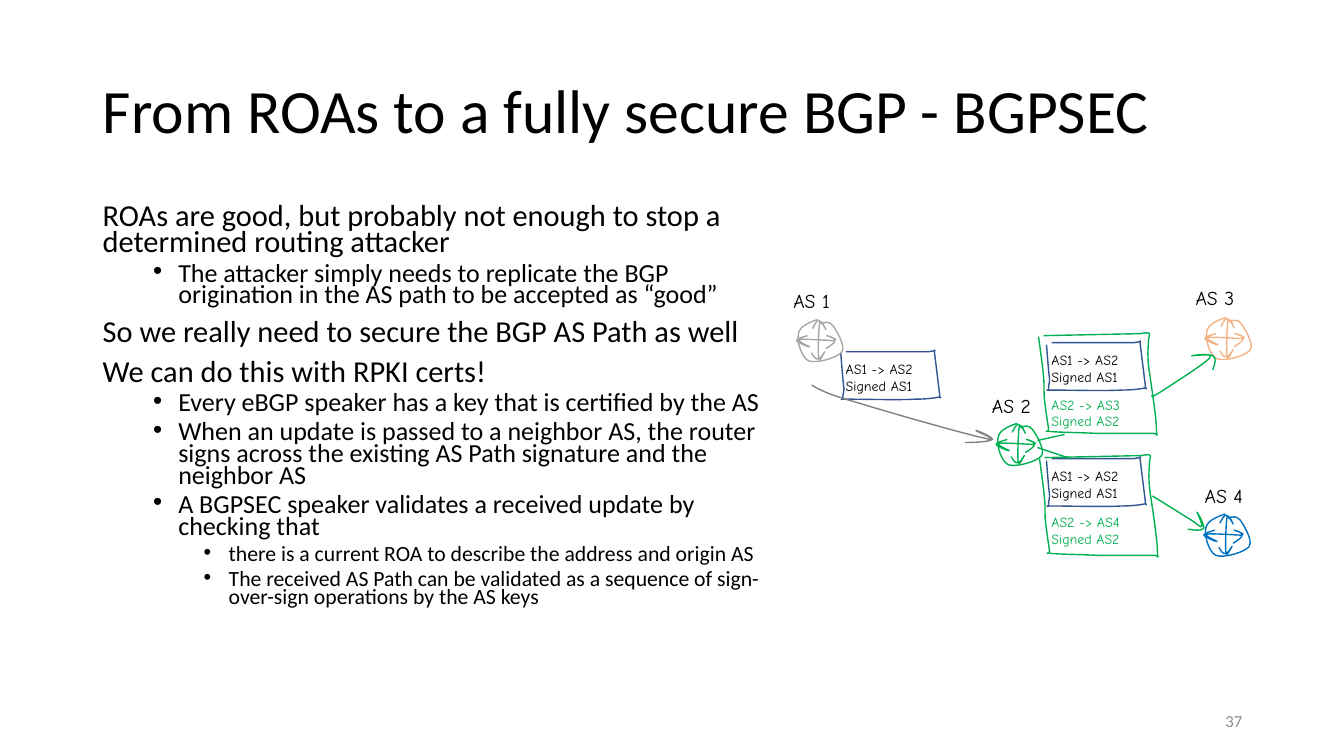
from lxml.etree import SubElement
from pptx import Presentation
from pptx.dml.color import RGBColor
from pptx.enum.shapes import MSO_CONNECTOR
from pptx.enum.text import MSO_ANCHOR, MSO_AUTO_SIZE, PP_ALIGN
from pptx.oxml.ns import qn
from pptx.util import Inches, Pt

# Fine grid: 1333 columns by 750 rows
CELL = Inches(0.01)
COLS, ROWS = 1333, 750

BLACK = RGBColor(0x00, 0x00, 0x00)
GREEN = RGBColor(0x00, 0xB0, 0x50)
BLUE = RGBColor(0x00, 0x70, 0xC0)
NAVY = RGBColor(0x32, 0x54, 0x91)
PEACH = RGBColor(0xF4, 0xB1, 0x83)
SILVER = RGBColor(0xA6, 0xA6, 0xA6)
GRAY = RGBColor(0x80, 0x80, 0x80)
PALE = RGBColor(0x8C, 0x8C, 0x8C)

SANS, HAND = "Calibri", "Comic Neue"
SIZES = (21.7, 18.6, 15.5)

POINTS = [
    (0, "ROAs are good, but probably not enough to stop a determined routing attacker"),
    (1, "The attacker simply needs to replicate the BGP origination in the AS path "
        "to be accepted as “good”"),
    (0, "So we really need to secure the BGP AS Path as well"),
    (0, "We can do this with RPKI certs!"),
    (1, "Every eBGP speaker has a key that is certified by the AS"),
    (1, "When an update is passed to a neighbor AS, the router signs across the "
        "existing AS Path signature and the neighbor AS"),
    (1, "A BGPSEC speaker validates a received update by checking that"),
    (2, "there is a current ROA to describe the address and origin AS"),
    (2, "The received AS Path can be validated as a sequence of sign-over-sign "
        "operations by the AS keys"),
]

# Pen strokes: a start, then three points per curve; a spare last point is a line
RING = [(21, 0), (12, 3), (3, 7), (2, 14), (0, 21), (5, 38), (12, 41),
        (19, 44), (41, 38), (45, 32), (49, 26), (39, 10), (36, 6),
        (32, 1), (28, 3), (24, 4)]
ACROSS = [(11, 16), (5, 18), (0, 19), (0, 21), (1, 23), (13, 28), (13, 27),
          (13, 27), (-1, 21), (3, 20), (7, 19), (34, 21), (38, 21),
          (43, 20), (30, 16), (30, 16), (30, 16), (39, 18), (38, 21),
          (38, 23), (34, 26), (29, 29)]
UPDOWN = [(16, 9), (18, 5), (20, 1), (22, 1), (24, 1), (29, 9), (29, 10),
          (29, 10), (24, -2), (23, 3), (22, 8), (21, 35), (22, 39),
          (22, 44), (28, 32), (28, 32), (28, 32), (24, 39), (22, 39),
          (19, 40), (17, 37), (15, 33)]
INNER = [(0, 4), (1, 17), (2, 30), (3, 38), (3, 45), (1, 46), (2, 48),
         (3, 50), (-5, 49), (7, 49), (19, 49), (59, 50), (74, 49),
         (89, 49), (97, 47), (97, 47), (101, 46), (98, 51), (98, 44),
         (97, 37), (94, 11), (93, 4), (92, -3), (94, 2), (93, 1),
         (92, 1), (87, 2), (87, 2), (5, 2)]
OUTER = [(0, 4), (2, 18), (4, 33), (5, 43), (6, 54), (5, 58), (6, 67),
         (7, 75), (9, 90), (10, 95), (11, 100), (3, 97), (11, 98),
         (19, 99), (41, 99), (58, 100), (75, 100), (101, 100), (111, 100),
         (121, 99), (117, 107), (117, 96), (117, 84), (111, 47), (109, 32),
         (108, 18), (109, 14), (109, 9), (109, 4), (111, 2), (110, 1),
         (109, -1), (101, 1), (101, 1), (5, 3)]
HOP_2 = [(805, 382), (812, 386), (820, 391), (849, 399), (878, 408), (958, 431),
         (978, 435), (998, 440), (966, 427), (968, 427), (969, 427), (986, 434),
         (984, 436), (982, 438), (969, 439), (957, 439)]
HOP_3 = [(1143, 392), (1142, 394), (1141, 395), (1151, 389), (1160, 383),
         (1195, 361), (1200, 355), (1205, 349), (1181, 353), (1182, 353),
         (1182, 353), (1200, 351), (1203, 353), (1207, 355), (1205, 361),
         (1203, 367)]
HOP_4 = [(1143, 492), (1143, 492), (1180, 515), (1180, 515), (1188, 520),
         (1191, 524), (1192, 522), (1193, 521), (1187, 507), (1187, 508),
         (1188, 508), (1195, 522), (1194, 524), (1192, 527), (1185, 526),
         (1178, 525)]


def grid(*cells):
    return [round(cell * CELL) for cell in cells]


def add_run(para, text, size, color, face):
    run = para.add_run()
    run.text = text
    font = run.font
    font.size, font.name = Pt(size), face
    font.color.rgb = color


def add_box(slide, at, lines, size, color, face=HAND, wrap=False):
    box = slide.shapes.add_textbox(*grid(*at))
    frame = box.text_frame
    frame.word_wrap = wrap
    frame.auto_size = MSO_AUTO_SIZE.NONE if wrap else MSO_AUTO_SIZE.SHAPE_TO_FIT_TEXT
    for i, line in enumerate(lines):
        para = frame.paragraphs[0] if i == 0 else frame.add_paragraph()
        add_run(para, line, size, color, face)
    return frame


def add_point(para, level, text):
    para.level = level
    para.line_spacing = 0.7
    if level:
        props = para._p.get_or_add_pPr()
        props.set("marL", str(Inches(0.25 + 0.5 * level)))
        props.set("indent", str(-Inches(0.25)))
        SubElement(props, qn("a:buFont"), typeface="Arial")
        SubElement(props, qn("a:buChar"), char="•")
    add_run(para, text, SIZES[level], BLACK, SANS)


def bend(shape):
    """Join each three line steps of an outline into one curve."""
    outline = next(shape._element.iter(qn("a:path")))
    steps = list(outline)[1:]
    for i in range(0, len(steps) // 3 * 3, 3):
        curve = SubElement(outline, qn("a:cubicBezTo"))
        steps[i].addprevious(curve)
        for step in steps[i:i + 3]:
            curve.append(step[0])
            outline.remove(step)


def draw(slide, stroke, color, left=0, top=0):
    dots = [grid(x + left, y + top) for x, y in stroke]
    pen = slide.shapes.build_freeform(*dots[0])
    pen.add_line_segments(dots[1:], close=False)
    shape = pen.convert_to_shape()
    bend(shape)
    shape.shadow.inherit = False
    shape.fill.background()
    shape.line.color.rgb = color
    shape.line.width = Pt(1)


def add_line(slide, ends, color):
    line = slide.shapes.add_connector(MSO_CONNECTOR.STRAIGHT, *grid(*ends))
    line.line.color.rgb = color
    line.line.width = Pt(1)
    SubElement(line._element.spPr, qn("a:effectLst"))


def main():
    deck = Presentation()
    deck.slide_width, deck.slide_height = grid(COLS, ROWS)
    slide = deck.slides.add_slide(deck.slide_layouts[5])

    # Title
    title = slide.shapes.title
    title.left, title.top, title.width, title.height = grid(92, 40, 1150, 145)
    frame = title.text_frame
    frame.auto_size = MSO_AUTO_SIZE.NONE
    frame.vertical_anchor = MSO_ANCHOR.MIDDLE
    para = frame.paragraphs[0]
    para.alignment, para.line_spacing = PP_ALIGN.LEFT, 0.9
    add_run(para, "From ROAs to a fully secure BGP - BGPSEC", 44, BLACK, SANS)

    # Points
    body = add_box(slide, (92, 200, 689, 476), [], 0, BLACK, wrap=True)
    for i, (level, text) in enumerate(POINTS):
        para = body.add_paragraph() if i else body.paragraphs[0]
        if i:
            para.space_before = Pt(5 if level else 10)
        add_point(para, level, text)

    # Routers and their names
    for name, left, top, color, x, y in [
            ("AS 1", 790, 317, SILVER, 777, 282), ("AS 2", 988, 420, GREEN, 974, 386),
            ("AS 3", 1195, 315, PEACH, 1176, 279), ("AS 4", 1194, 510, BLUE, 1185, 475)]:
        for stroke in (RING, ACROSS, UPDOWN):
            draw(slide, stroke, color, left, top)
        add_box(slide, (x, y, 70, 34), [name], 14, BLACK)

    # Signed updates
    for left, top in [(834, 347), (1038, 338), (1038, 453)]:
        add_box(slide, (left - 5, top + 6, 110, 44), ["AS1 -> AS2", "Signed AS1"], 10, BLACK)
        draw(slide, INNER, NAVY, left, top)
    for goal, left, top, y in [("AS3", 1030, 330, 388), ("AS4", 1031, 451, 505)]:
        add_box(slide, (1033, y, 113, 44), ["AS2 -> " + goal, "Signed AS2"], 10, GREEN)
        draw(slide, OUTER, GREEN, left, top)

    # Hops between routers
    for stroke, color in [(HOP_2, GRAY), (HOP_3, GREEN), (HOP_4, GREEN)]:
        draw(slide, stroke, color)
    for ends in [(1029, 437, 1056, 431), (1029, 444, 1062, 455)]:
        add_line(slide, ends, GREEN)

    # Slide number
    frame = add_box(slide, (942, 695, 300, 40), ["37"], 12, PALE, SANS, wrap=True)
    frame.vertical_anchor = MSO_ANCHOR.MIDDLE
    frame.paragraphs[0].alignment = PP_ALIGN.RIGHT

    deck.save("out.pptx")


if __name__ == "__main__":
    main()
